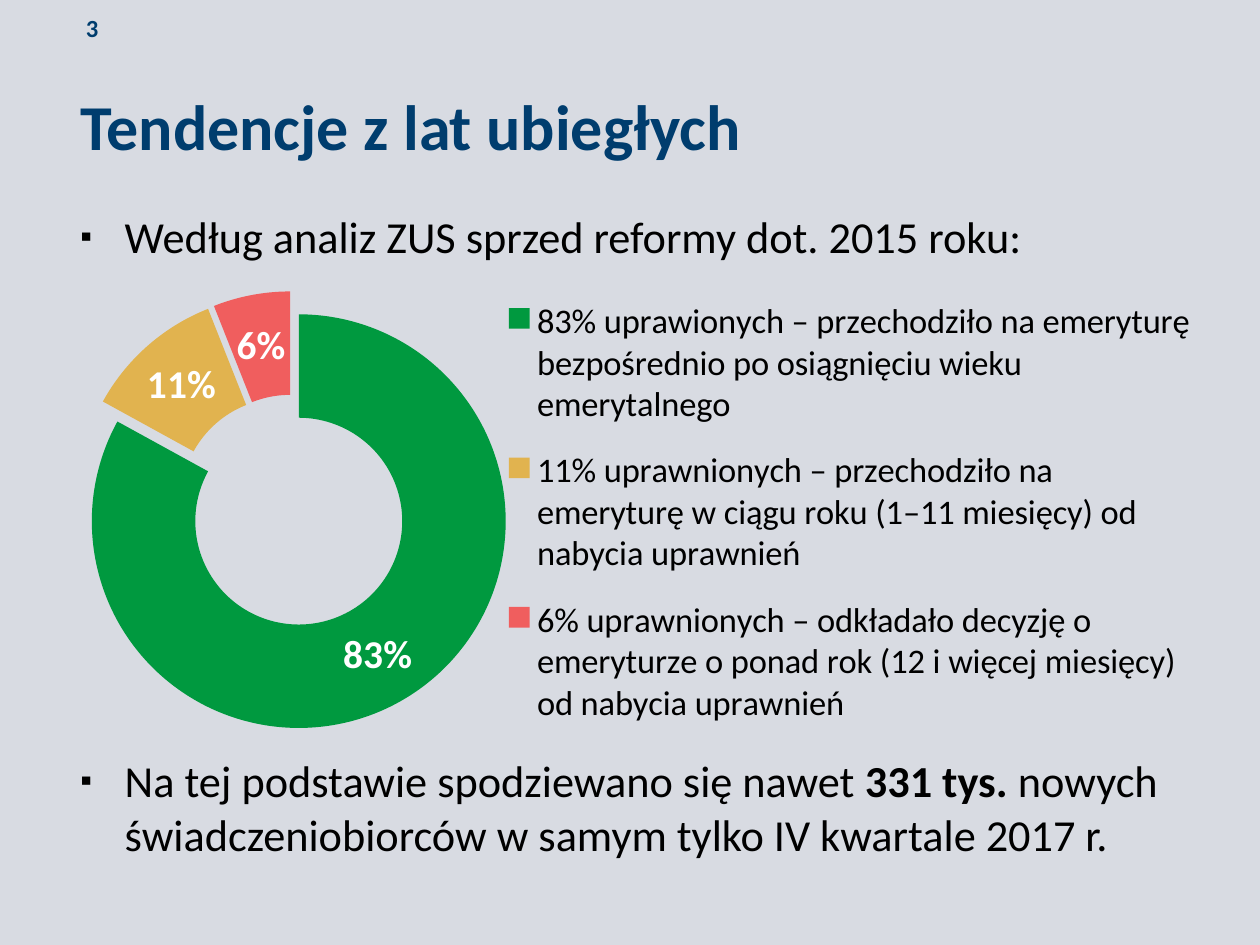
from lxml import etree
from pptx import Presentation, util as u
from pptx.chart import data as cd
from pptx.dml import color
from pptx.enum import chart as ch, text
from pptx.oxml import ns


def rgb(value):
    """Return a colour from a hex string."""
    return color.RGBColor.from_string(value)


def apply(obj, **values):
    """Set each given attribute on an object."""
    for name, value in values.items():
        setattr(obj, name, value)


def add_xml(parent, tag, **attrs):
    """Append a child element with the given attributes."""
    return etree.SubElement(parent, ns.qn(tag), {k: str(v) for k, v in attrs.items()})


class Builder:
    """Hold the style and the current slide."""

    font = "Calibri"
    navy, black, white, back = "003D6E", "000000", "FFFFFF", "D8DBE2"

    def __init__(self, prs):
        """Add a blank slide with the plain background."""
        self.s = prs.slides.add_slide(prs.slide_layouts[6])
        fill = self.s.background.fill
        fill.solid()
        fill.fore_color.rgb = rgb(self.back)

    def style(self, font, size, hex_color, bold=False):
        """Apply name, size, weight and colour to a font."""
        apply(font, name=self.font, size=u.Pt(size), bold=bold)
        font.color.rgb = rgb(hex_color)

    def text(self, box, runs, size, hex_color, **frame):
        """Add a one-paragraph text box from (text, bold) runs."""
        sp = self.s.shapes.add_textbox(*map(u.Inches, box))
        tf = sp.text_frame
        apply(tf, word_wrap=True, **frame)
        p = tf.paragraphs[0]
        for words, bold in runs:
            r = p.add_run()
            r.text = words
            self.style(r.font, size, hex_color, bold)
        return p

    def bullet(self, box, runs):
        """Add a body paragraph with a small square bullet."""
        p = self.text(box, runs, 36, self.black)
        pPr = p._p.get_or_add_pPr()
        pPr.set("marL", str(u.Inches(0.5)))
        pPr.set("indent", str(u.Inches(-0.5)))
        add_xml(pPr, "a:buSzPct", val=75000)
        add_xml(pPr, "a:buFont", typeface="Arial")
        add_xml(pPr, "a:buChar", char="▪")

    def layout(self, parent, index, box, inner=False):
        """Place a chart part at fractions of the chart area."""
        for old in parent.findall(ns.qn("c:layout")):
            parent.remove(old)
        layout = add_xml(parent, "c:layout")
        parent.insert(index, layout)
        manual = add_xml(layout, "c:manualLayout")
        if inner:
            add_xml(manual, "c:layoutTarget", val="inner")
        for mode in ("xMode", "yMode"):
            add_xml(manual, f"c:{mode}", val="edge")
        for side, value in zip("xywh", box):
            add_xml(manual, f"c:{side}", val=value)

    def explode(self, part, before, percent):
        """Move a series or a point outwards from the centre."""
        for old in part.findall(ns.qn("c:explosion")):
            part.remove(old)
        part.find(ns.qn(before)).addprevious(add_xml(part, "c:explosion", val=percent))

    def doughnut(self, box, slices):
        """Add an exploded doughnut from (label, value, colour) slices."""
        data = cd.CategoryChartData()
        data.categories = [label for label, _, _ in slices]
        data.add_series("Series 1", [value for _, value, _ in slices])
        chart = self.s.shapes.add_chart(
            ch.XL_CHART_TYPE.DOUGHNUT, *map(u.Inches, box), data).chart
        self.style(chart.font, 10, self.navy)
        apply(chart, has_title=False, has_legend=True)
        apply(chart.legend, position=ch.XL_LEGEND_POSITION.RIGHT, include_in_layout=False)
        self.style(chart.legend.font, 28, self.black)
        self.layout(chart.legend._element, 1, (0.407, 0.013, 0.591, 0.982))

        plot = chart.plots[0]
        apply(plot, vary_by_categories=True, has_data_labels=True)
        self.layout(plot._element.getparent(), 0, (0.013, 0.016, 0.4, 0.966), True)
        series = plot.series[0]
        for i, (_, _, hex_color) in enumerate(slices):
            form = series.points[i].format
            form.fill.solid()
            form.fill.fore_color.rgb = rgb(hex_color)
            form.line.fill.background()
        ser = series._element
        self.explode(ser, "c:dPt", 25)
        for point in ser.findall(ns.qn("c:dPt")):
            self.explode(point, "c:spPr", 12)

        for labels in (plot.data_labels, series.data_labels):
            apply(labels, show_percentage=True, show_value=False,
                  number_format="0%", number_format_is_linked=False)
            self.style(labels.font, 32, self.white, True)


def main():
    """Build the slide and save it."""
    prs = Presentation()
    apply(prs, slide_width=u.Inches(14.22), slide_height=u.Inches(10.67))
    b = Builder(prs)
    inset = u.Inches(0.06)
    b.text((0.91, 0.09, 0.85, 0.45), [("3", True)], 20, b.navy,
           vertical_anchor=text.MSO_ANCHOR.MIDDLE, margin_left=inset,
           margin_right=inset, margin_top=inset, margin_bottom=inset)
    b.text((0.81, 0.93, 12.6, 0.94), [("Tendencje z lat ubiegłych", True)], 52, b.navy)
    b.bullet((0.81, 2.31, 12.6, 0.71),
             [("Według analiz ZUS sprzed reformy dot. 2015 roku:", False)])
    b.doughnut((0.5, 3.05, 13.15, 5.44), [
        ("83% uprawionych – przechodziło na emeryturę bezpośrednio "
         "po osiągnięciu wieku emerytalnego", 83, "00993F"),
        ("11% uprawnionych – przechodziło na emeryturę w ciągu roku "
         "(1–11 miesięcy) od nabycia uprawnień", 11, "E1B34F"),
        ("6% uprawnionych – odkładało decyzję o emeryturze o ponad rok "
         "(12 i więcej miesięcy) od nabycia uprawnień", 6, "F05E5E"),
    ])
    b.bullet((0.81, 8.46, 12.6, 1.32), [
        ("Na tej podstawie spodziewano się nawet ", False),
        ("331 tys. ", True),
        ("nowych świadczeniobiorców w samym tylko IV kwartale 2017 r.", False),
    ])
    prs.save("out.pptx")


if __name__ == "__main__":
    main()
